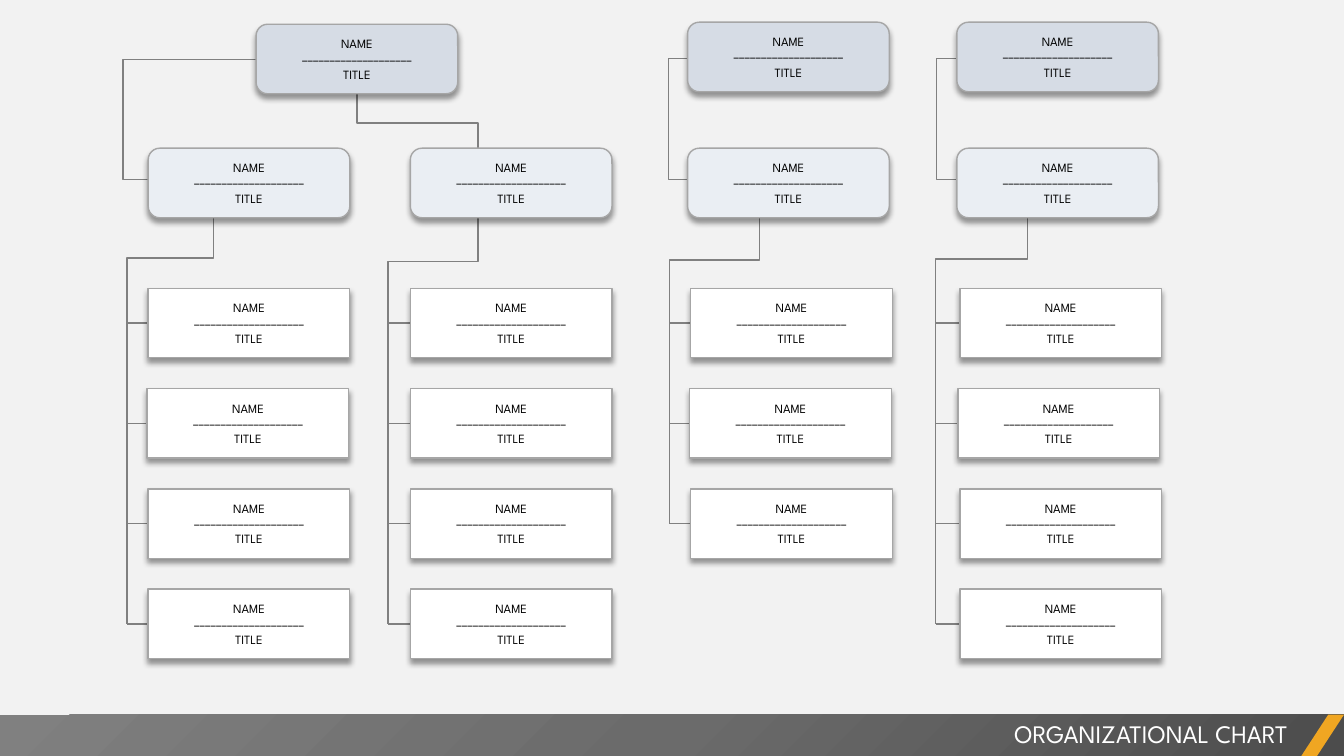
from dataclasses import dataclass

from lxml.etree import SubElement
from pptx import Presentation
from pptx.dml.color import RGBColor
from pptx.enum.shapes import MSO_CONNECTOR as Link, MSO_SHAPE as Shape
from pptx.enum.text import MSO_ANCHOR as Anchor, MSO_AUTO_SIZE as AutoSize, PP_ALIGN as Align
from pptx.oxml import parse_xml
from pptx.oxml.ns import nsdecls, qn
from pptx.util import Inches, Pt


@dataclass(frozen=True)
class Theme:
    font: str = "League Spartan"
    title_size: float = 18
    box_size: float = 9
    line_width: float = 1
    page: str = "F2F2F2"
    head: str = "D6DCE5"
    lead: str = "EAEEF3"
    staff: str = "FFFFFF"
    border: str = "A6A6A6"
    link: str = "808080"
    accent: str = "F0A622"
    title: str = "FFFFFF"
    ink: str = "000000"
    bar: tuple = ((0, "4C4C4C"), (50, "6B6B6B"), (100, "808080"))


@dataclass(frozen=True)
class Team:
    left: float      # column edge, shared by the lead and the staff
    trunk: float     # x of the vertical line beside the staff
    drop: float      # x where the line leaves the lead
    turn: float      # y where that line bends
    nudges: tuple    # sideways shift of each staff box


THEME = Theme()
SLIDE_W, SLIDE_H = 13.33, 7.5
BOX_W, BOX_H = 2, 0.69
LEAD_TOP, STAFF_TOP, STAFF_PITCH = 1.47, 2.86, 0.995
LEAD_MID = 1.78
STUB = 0.66
BAR_TOP, BAR_H, ACCENT_W = 7.09, 0.42, 0.43
BOX_LINES = ("NAME", "–" * 20, "TITLE")

TEAMS = (
    Team(1.47, 1.26, 2.12, 2.56, (0, -0.01, 0, 0)),
    Team(4.07, 3.85, 4.74, 2.59, (0, 0, 0, 0)),
    Team(6.82, 6.64, 7.53, 2.58, (0.03, 0.02, 0.03)),
    Team(9.49, 9.28, 10.19, 2.57, (0.03, 0.01, 0.03, 0.03)),
)
HEADS = ((2.54, 0.24), (6.82, 0.22), (9.49, 0.22))
# Start, end and the x of the vertical part of each side link
SIDE_LINKS = (
    ((2.74, 0.59), (1.49, LEAD_MID), 1.22),
    ((7.86, 0.58), (6.86, LEAD_MID), 6.63),
    ((10.53, 0.58), (9.53, LEAD_MID), 9.29),
)


def rgb(value):
    return RGBColor.from_string(value)


def add_run(p, text, size, color):
    r = p.add_run()
    r.text = text
    r.font.name = THEME.font
    r.font.size = Pt(size)
    r.font.color.rgb = rgb(color)


def add_plain(s, kind, left, top, width, height, fill=None):
    sp = s.shapes.add_shape(kind, *map(Inches, (left, top, width, height)))
    sp.shadow.inherit = False
    sp.line.fill.background()
    if fill:
        sp.fill.solid()
        sp.fill.fore_color.rgb = rgb(fill)
    return sp


def add_box(s, left, top, fill, kind=Shape.FLOWCHART_ALTERNATE_PROCESS):
    sp = add_plain(s, kind, left, top, BOX_W, BOX_H, fill)
    sp.line.color.rgb = rgb(THEME.border)
    sp.line.width = Pt(THEME.line_width)
    # Soft shadow below the box
    effects = sp._element.spPr.find(qn("a:effectLst"))
    shadow = SubElement(effects, qn("a:outerShdw"), blurRad=str(Pt(4)), dist=str(Pt(3)),
                        dir="5400000", algn="t", rotWithShape="0")
    color = SubElement(shadow, qn("a:srgbClr"), val=THEME.ink)
    SubElement(color, qn("a:alpha"), val="40000")
    # Three centred lines
    tf = sp.text_frame
    tf.word_wrap = True
    tf.vertical_anchor = Anchor.MIDDLE
    tf.margin_left = tf.margin_right = tf.margin_top = tf.margin_bottom = Inches(0.02)
    for i, text in enumerate(BOX_LINES):
        p = tf.add_paragraph() if i else tf.paragraphs[0]
        p.alignment = Align.CENTER
        add_run(p, text, THEME.box_size, THEME.ink)


def add_link(s, start, end, kind=Link.STRAIGHT, bend=None):
    cx = s.shapes.add_connector(kind, *map(Inches, (*start, *end)))
    cx.line.color.rgb = rgb(THEME.link)
    cx.line.width = Pt(THEME.line_width)
    props = cx._element.spPr
    SubElement(props, qn("a:effectLst"))
    if bend is not None:
        guides = props.find(qn("a:prstGeom")).get_or_add_avLst()
        SubElement(guides, qn("a:gd"), name="adj1", fmla=f"val {round(bend * 100000)}")
    return cx


def add_side_link(s, start, end, turn_x):
    bend = (turn_x - start[0]) / (end[0] - start[0])
    add_link(s, start, end, Link.ELBOW, bend)


def add_down_link(s, start, end, turn_y):
    """Elbow that leaves downwards: a sideways elbow turned by a quarter."""
    (x1, y1), (x2, y2) = start, end
    mid_x, mid_y = (x1 + x2) / 2, (y1 + y2) / 2
    half_w, half_h = (y2 - y1) / 2, abs(x2 - x1) / 2
    side = 1 if x2 < x1 else -1
    cx = add_link(s, (mid_x - side * half_w, mid_y - half_h),
                  (mid_x + side * half_w, mid_y + half_h),
                  Link.ELBOW, (turn_y - y1) / (y2 - y1))
    quarter = 90 if side == 1 else 270
    cx._element.spPr.find(qn("a:xfrm")).set("rot", str(quarter * 60000))


def add_footer(s):
    # Grey bar, darkest at the lower right
    bar = add_plain(s, Shape.RECTANGLE, 0, BAR_TOP, SLIDE_W, BAR_H)
    stops = "".join(f'<a:gs pos="{pos * 1000}"><a:srgbClr val="{color}"/></a:gs>'
                    for pos, color in THEME.bar)
    bar._element.spPr.find(qn("a:prstGeom")).addnext(parse_xml(
        f'<a:gradFill {nsdecls("a")} rotWithShape="1"><a:gsLst>{stops}</a:gsLst>'
        '<a:path path="circle"><a:fillToRect l="100000" t="100000"/></a:path></a:gradFill>'))
    # Slanted accent
    accent = add_plain(s, Shape.PARALLELOGRAM, SLIDE_W - ACCENT_W, BAR_TOP,
                       ACCENT_W, BAR_H, THEME.accent)
    accent.adjustments[0] = 0.652
    # Slide title
    tf = s.shapes.add_textbox(*map(Inches, (5.25, 7.08, 7.62, 0.4))).text_frame
    tf.word_wrap = True
    tf.auto_size = AutoSize.SHAPE_TO_FIT_TEXT
    p = tf.paragraphs[0]
    p.alignment = Align.RIGHT
    add_run(p, "ORGANIZATIONAL CHART", THEME.title_size, THEME.title)


def add_team_links(s, team):
    mids = [STAFF_TOP + i * STAFF_PITCH + BOX_H / 2 for i in range(len(team.nudges))]
    for y in mids:
        add_link(s, (team.trunk, y), (team.trunk + STUB, y))
    add_down_link(s, (team.drop, 1.85), (team.trunk, mids[-1]), team.turn)


def add_team_boxes(s, team):
    add_box(s, team.left, LEAD_TOP, THEME.lead)
    for i, nudge in enumerate(team.nudges):
        add_box(s, team.left + nudge, STAFF_TOP + i * STAFF_PITCH, THEME.staff, Shape.RECTANGLE)


def main():
    prs = Presentation()
    prs.slide_width, prs.slide_height = Inches(SLIDE_W), Inches(SLIDE_H)
    s = prs.slides.add_slide(prs.slide_layouts[6])
    s.background.fill.solid()
    s.background.fill.fore_color.rgb = rgb(THEME.page)
    add_footer(s)

    # Links lie behind the boxes
    for team in TEAMS:
        add_team_links(s, team)
    for link in SIDE_LINKS:
        add_side_link(s, *link)
    add_down_link(s, (3.54, 0.62), (4.74, 1.82), 1.22)

    # Boxes
    for left, top in HEADS:
        add_box(s, left, top, THEME.head)
    for team in TEAMS:
        add_team_boxes(s, team)
    prs.save("out.pptx")


if __name__ == "__main__":
    main()
